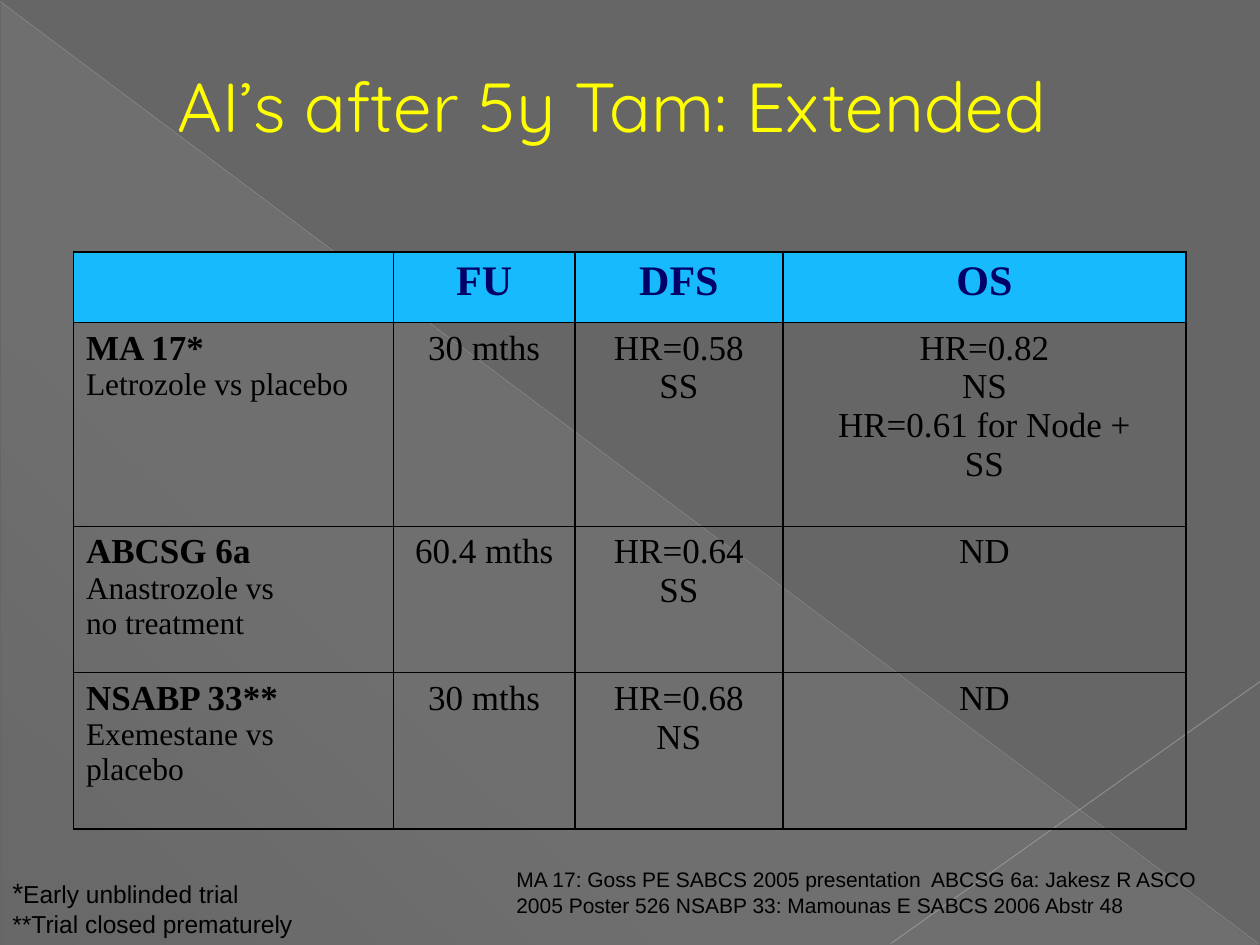
from typing import NamedTuple

from lxml import etree
from pptx import Presentation
from pptx import util as u
from pptx.dml.color import RGBColor
from pptx.enum import shapes, text
from pptx.oxml import parse_xml
from pptx.oxml.ns import nsdecls, qn

BACKDROP = RGBColor(0x66, 0x66, 0x66)
SHEEN = RGBColor(0xD2, 0xD2, 0xD2)
FALLING = RGBColor(0xBF, 0xBF, 0xBF)
RISING = RGBColor(0xC6, 0xC6, 0xC6)
HEADER = RGBColor(0x17, 0xBB, 0xFD)
NAVY = RGBColor(0x00, 0x00, 0x66)
YELLOW = RGBColor(0xFF, 0xFF, 0x00)
BLACK = RGBColor(0x00, 0x00, 0x00)
SERIF, SANS, DISPLAY = "Times New Roman", "Arial", "Quicksand"


class Run(NamedTuple):
    words: str
    size: float
    font: str = SERIF
    color: RGBColor = BLACK
    bold: bool = False


class Box(NamedTuple):
    left: float
    top: float
    width: float
    height: float
    lines: list[list[Run]]
    wrap: bool = True
    anchor: text.MSO_ANCHOR = text.MSO_ANCHOR.TOP
    indent: float = 0


class Ray(NamedTuple):
    x1: float
    y1: float
    x2: float
    y2: float
    color: RGBColor
    width: float
    alpha: int


class Trial(NamedTuple):
    name: str
    arms: list[str]
    results: list[list[str]]


RAYS = [
    Ray(0, 0.03, 25.37, 19.02, FALLING, 0.39, 35),
    Ray(25.4, 13.74, 17.96, 19.02, RISING, 0.47, 45),
]
HEADINGS = ["", "FU", "DFS", "OS"]
TRIALS = [
    Trial("MA 17*", ["Letrozole vs placebo"],
          [["30 mths"], ["HR=0.58", "SS"],
           ["HR=0.82", "NS", "HR=0.61 for Node +", "SS"]]),
    Trial("ABCSG 6a", ["Anastrozole vs", "no treatment"],
          [["60.4 mths"], ["HR=0.64", "SS"], ["ND"]]),
    Trial("NSABP 33**", ["Exemestane vs", "placebo"],
          [["30 mths"], ["HR=0.68", "NS"], ["ND"]]),
]
COLUMNS = [6.45, 3.66, 4.19, 8.13]
ROWS = [1.42, 4.11, 2.95, 3.15]
BOXES = [
    Box(0, 17.53, 6.3, 1.52,
        [[Run("*", 16, SANS), Run("Early unblinded trial", 14, SANS)],
         [Run("**Trial closed prematurely", 14, SANS)]], wrap=False),
    Box(1.98, 1.27, 23.42, 1.7,
        [[Run("AI’s after 5y Tam: Extended", 39.6, DISPLAY, YELLOW)]],
        anchor=text.MSO_ANCHOR.MIDDLE, indent=1.35),
    Box(10.16, 17.35, 14.58, 1.27,
        [[Run("MA 17: Goss PE SABCS 2005 presentation  ABCSG 6a: Jakesz R ASCO "
              "2005 Poster 526 NSABP 33: Mamounas E SABCS 2006 Abstr 48", 12, SANS)]]),
]


def write(tf, lines: list[list[Run]], align=text.PP_ALIGN.LEFT) -> None:
    """Write each list of runs as one paragraph."""
    for i, line in enumerate(lines):
        p = tf.add_paragraph() if i else tf.paragraphs[0]
        p.alignment = align
        for run in line:
            r = p.add_run()
            r.text = run.words
            r.font.size = u.Pt(run.size)
            r.font.name = run.font
            r.font.bold = run.bold
            r.font.color.rgb = run.color


def add_sheen(s) -> None:
    """Draw the translucent gradient triangle."""
    sp = s.shapes.add_shape(shapes.MSO_SHAPE.RIGHT_TRIANGLE,
                            u.Cm(0.03), u.Cm(0.05), u.Cm(25.35), u.Cm(19))
    sp.shadow.inherit = False
    sp.line.fill.background()
    stops = "".join(
        f'<a:gs pos="{pos * 1000}"><a:srgbClr val="{SHEEN}">'
        f'<a:alpha val="{alpha * 1000}"/></a:srgbClr></a:gs>'
        for pos, alpha in [(0, 10), (70, 8), (100, 1)])
    grad = parse_xml(f'<a:gradFill {nsdecls("a")}><a:gsLst>{stops}</a:gsLst>'
                     f'<a:lin ang="{133 * 60000}" scaled="0"/></a:gradFill>')
    sp._element.spPr.find(qn("a:prstGeom")).addnext(grad)


def add_ray(s, ray: Ray) -> None:
    """Draw one translucent background line."""
    sp = s.shapes.add_connector(shapes.MSO_CONNECTOR.STRAIGHT, u.Cm(ray.x1),
                                u.Cm(ray.y1), u.Cm(ray.x2), u.Cm(ray.y2))
    sp.line.width = u.Pt(ray.width)
    sp.line.color.rgb = ray.color
    spPr = sp._element.spPr
    color = spPr.find(".//" + qn("a:srgbClr"))
    etree.SubElement(color, qn("a:alpha")).set("val", str(ray.alpha * 1000))
    etree.SubElement(spPr, qn("a:effectLst"))


def add_box(s, box: Box) -> None:
    """Add one text box."""
    sp = s.shapes.add_textbox(u.Cm(box.left), u.Cm(box.top),
                              u.Cm(box.width), u.Cm(box.height))
    tf = sp.text_frame
    tf.word_wrap = box.wrap
    tf.vertical_anchor = box.anchor
    write(tf, box.lines)
    if box.indent:
        pPr = tf.paragraphs[0]._p.get_or_add_pPr()
        pPr.set("marL", str(u.Cm(box.indent)))
        pPr.set("indent", "0")
    else:
        tf.auto_size = text.MSO_AUTO_SIZE.SHAPE_TO_FIT_TEXT


def style_cell(cell, fill: RGBColor | None) -> None:
    """Set the borders and fill of a table cell."""
    if fill is None:
        cell.fill.background()
    else:
        cell.fill.solid()
        cell.fill.fore_color.rgb = fill
    tcPr = cell._tc.get_or_add_tcPr()
    for i, side in enumerate(("lnL", "lnR", "lnT", "lnB")):
        tcPr.insert(i, parse_xml(
            f'<a:{side} {nsdecls("a")} w="{u.Pt(1)}"><a:solidFill>'
            f'<a:srgbClr val="{BLACK}"/></a:solidFill></a:{side}>'))


def add_trials(s) -> None:
    """Build the table of trial results."""
    table = s.shapes.add_table(len(ROWS), len(COLUMNS), u.Cm(1.48), u.Cm(5.08),
                               u.Cm(sum(COLUMNS)), u.Cm(sum(ROWS))).table
    table.horz_banding = table.first_row = False
    for column, width in zip(table.columns, COLUMNS):
        column.width = u.Cm(width)
    for row, height in zip(table.rows, ROWS):
        row.height = u.Cm(height)
    grid = [[[[Run(h, 24, color=NAVY, bold=True)]] if h else [] for h in HEADINGS]]
    for trial in TRIALS:
        label = [[Run(trial.name, 20, bold=True)]] + [[Run(a, 18)] for a in trial.arms]
        grid.append([label] + [[[Run(v, 20)] for v in values] for values in trial.results])
    for i, row in enumerate(grid):
        for j, lines in enumerate(row):
            cell = table.cell(i, j)
            style_cell(cell, None if i else HEADER)
            write(cell.text_frame, lines,
                  text.PP_ALIGN.CENTER if j else text.PP_ALIGN.LEFT)


def main() -> None:
    """Build and save the slide."""
    prs = Presentation()
    prs.slide_width, prs.slide_height = u.Cm(25.4), u.Cm(19.05)
    s = prs.slides.add_slide(prs.slide_layouts[6])
    s.background.fill.solid()
    s.background.fill.fore_color.rgb = BACKDROP
    add_sheen(s)
    for ray in RAYS:
        add_ray(s, ray)
    add_trials(s)
    for box in BOXES:
        add_box(s, box)
    prs.save("out.pptx")


if __name__ == "__main__":
    main()
